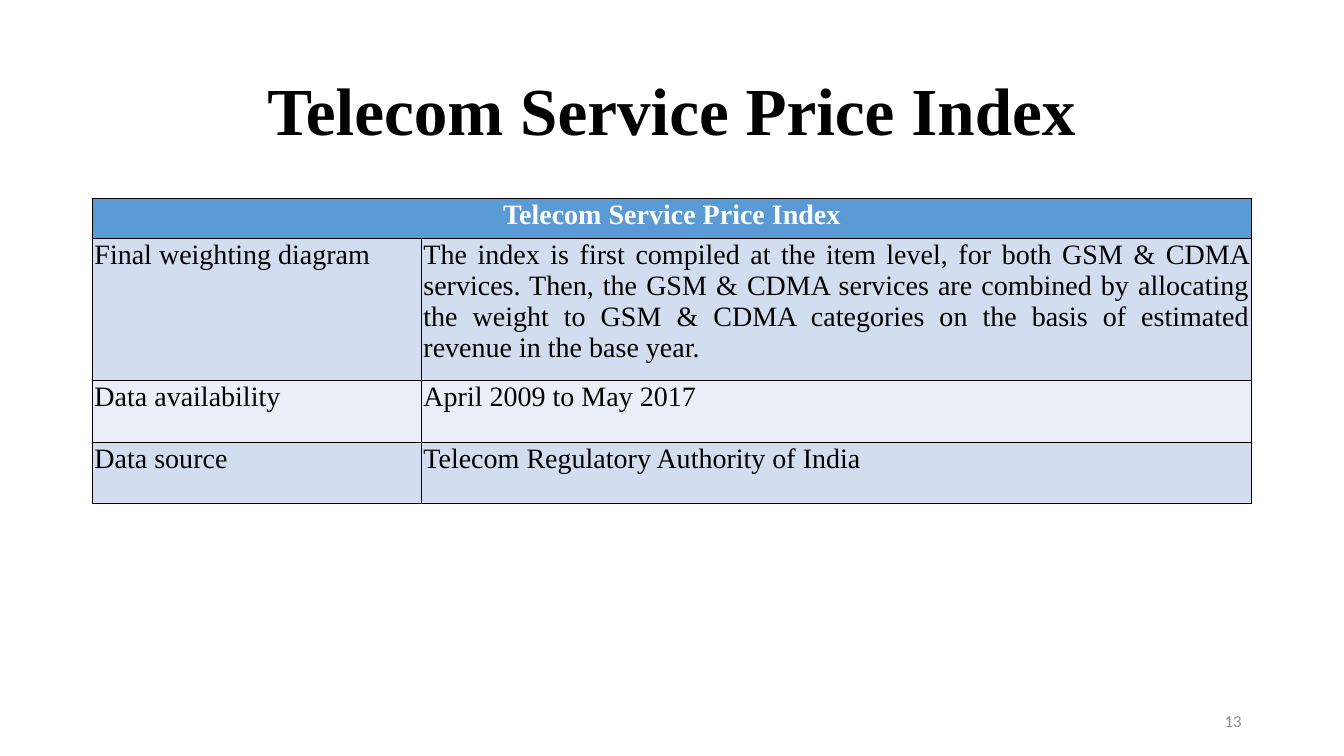
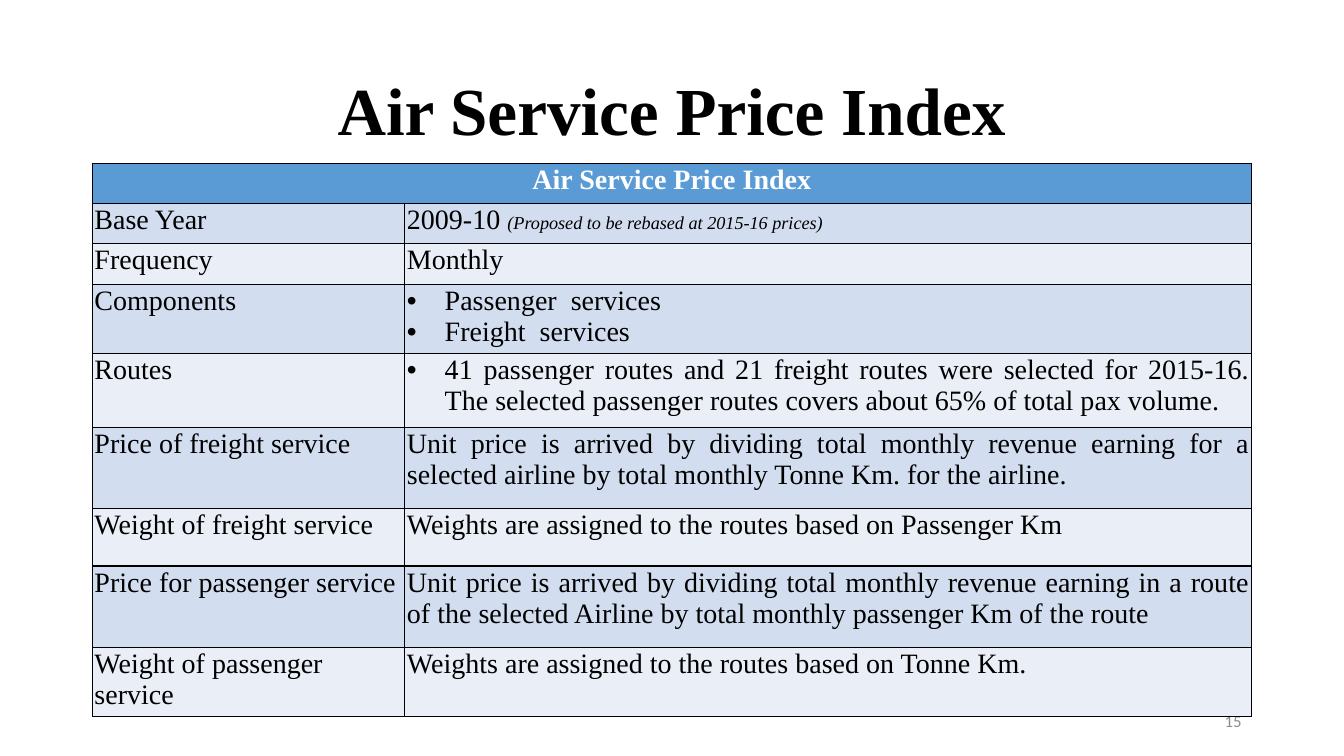
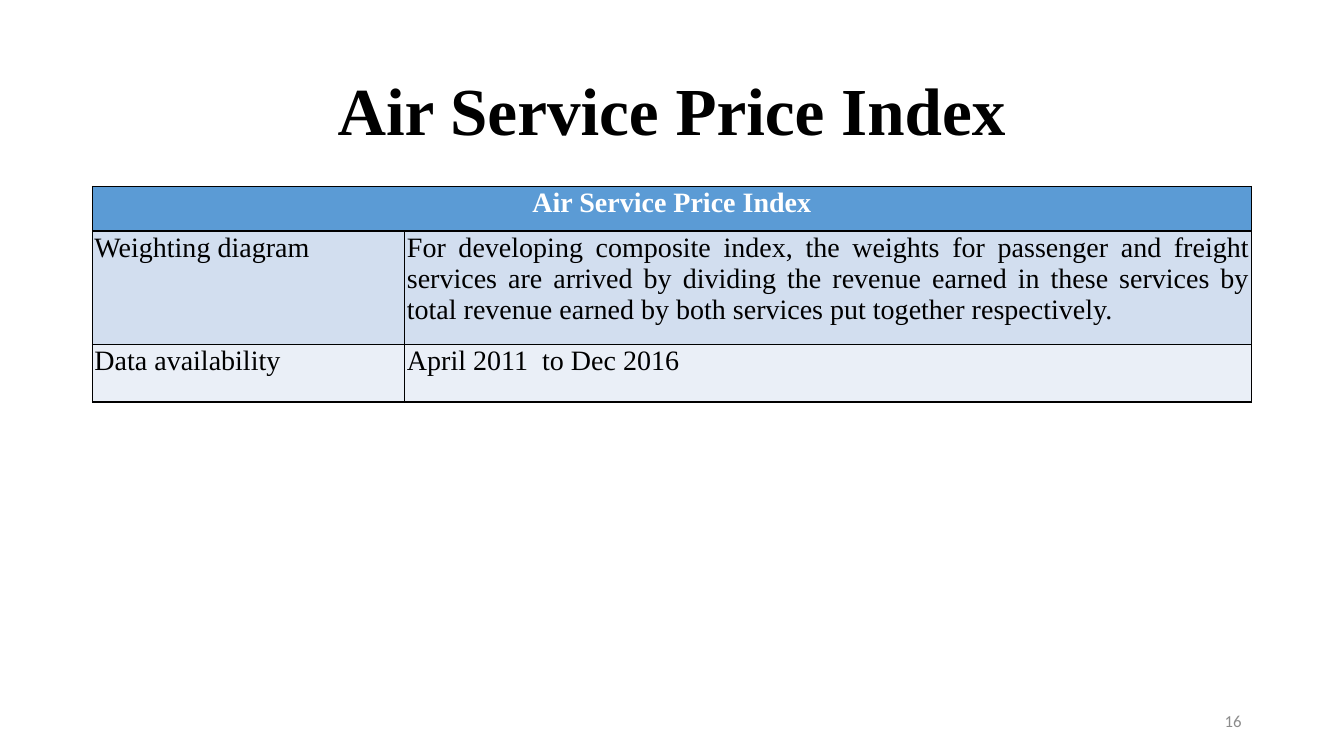
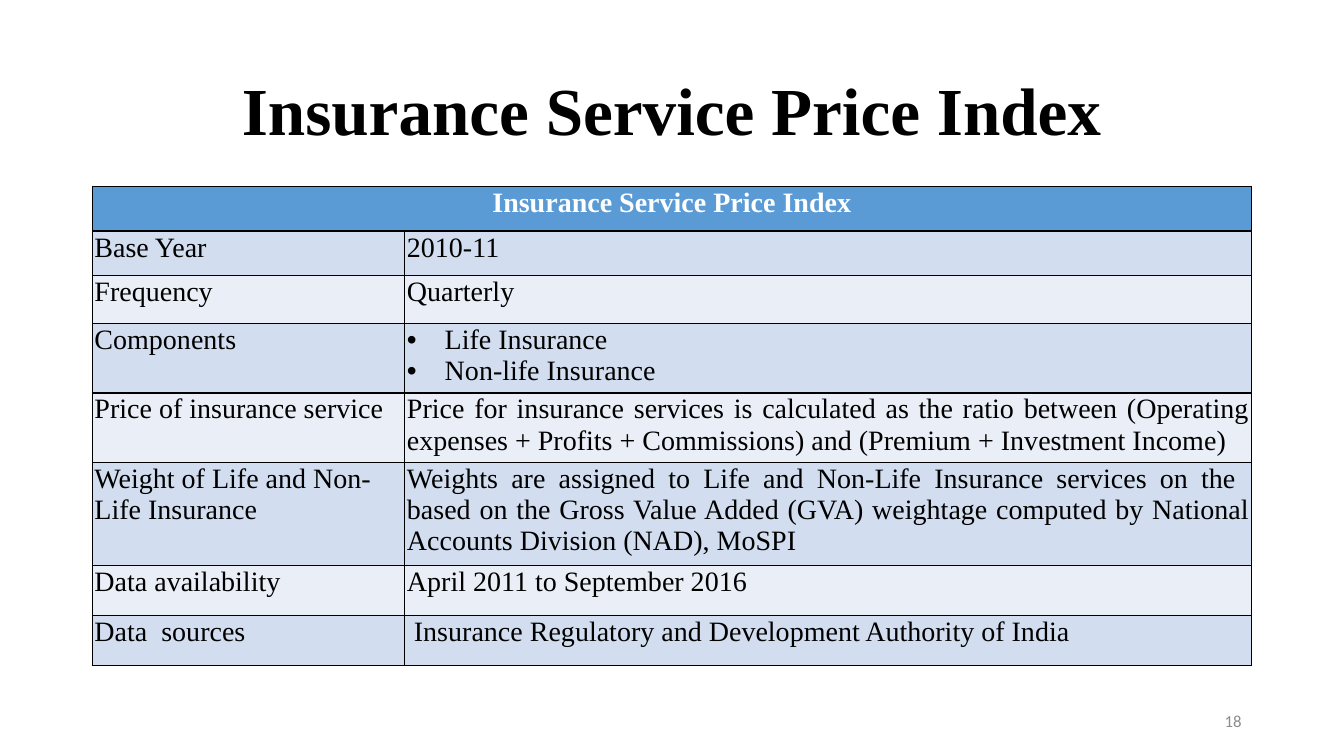
from lxml import etree
from pptx import Presentation
from pptx.dml.color import RGBColor
from pptx.enum.text import MSO_ANCHOR, PP_ALIGN
from pptx.oxml.ns import qn
from pptx.util import Pt

LEFT, CENTER, RIGHT, JUSTIFY = PP_ALIGN.LEFT, PP_ALIGN.CENTER, PP_ALIGN.RIGHT, PP_ALIGN.JUSTIFY
MIDDLE = MSO_ANCHOR.MIDDLE

BLACK = RGBColor(0x00, 0x00, 0x00)
WHITE = RGBColor(0xFF, 0xFF, 0xFF)
GRAY = RGBColor(0x8C, 0x8C, 0x8C)
HEADER_BLUE = RGBColor(0x5B, 0x9B, 0xD5)
BANDS = (RGBColor(0xD2, 0xDE, 0xEF), RGBColor(0xEA, 0xEF, 0xF7))

SERIF, SANS = "Times New Roman", "Calibri"
MARGIN, CONTENT_WIDTH = 66, 828
BULLET_INDENT = 27


def add_run(paragraph, text, font=SERIF, size=20, color=BLACK, bold=False, italic=False):
    run = paragraph.add_run()
    run.text = text
    run.font.name = font
    run.font.size = Pt(size)
    run.font.color.rgb = color
    run.font.bold = bold
    run.font.italic = italic


def write(frame, text, align=LEFT, spacing=None, bullet=False, note=None, **font):
    lines = [text] if isinstance(text, str) else text
    for index, line in enumerate(lines):
        paragraph = frame.add_paragraph() if index else frame.paragraphs[0]
        paragraph.alignment = align
        if spacing:
            paragraph.line_spacing = spacing
        if bullet:
            properties = paragraph._p.get_or_add_pPr()
            properties.set("marL", str(Pt(BULLET_INDENT)))
            properties.set("indent", str(-Pt(BULLET_INDENT)))
            etree.SubElement(properties, qn("a:buFont"), typeface="Arial")
            etree.SubElement(properties, qn("a:buChar"), char="•")
        add_run(paragraph, line, **font)
        if note:
            add_run(paragraph, note, size=13, italic=True)


def add_borders(cell):
    properties = cell._tc.get_or_add_tcPr()
    for side in ("a:lnL", "a:lnR", "a:lnT", "a:lnB"):
        border = etree.SubElement(properties, qn(side), w=str(Pt(1)))
        fill = etree.SubElement(border, qn("a:solidFill"))
        etree.SubElement(fill, qn("a:srgbClr"), val=str(BLACK))


class Deck:
    def __init__(self):
        self.presentation = Presentation()
        self.presentation.slide_width = Pt(960)
        self.presentation.slide_height = Pt(540)
        self.slide = None

    def add_slide(self, title, number):
        self.slide = self.presentation.slides.add_slide(self.presentation.slide_layouts[6])
        self.text_box(title, MARGIN, 28.8, CONTENT_WIDTH, 104.4,
                      align=CENTER, spacing=0.9, size=48, bold=True)
        self.text_box(str(number), 678, 500.4, 216, 28.8,
                      align=RIGHT, font=SANS, size=12, color=GRAY)

    def text_box(self, text, left, top, width, height, **style):
        box = self.slide.shapes.add_textbox(Pt(left), Pt(top), Pt(width), Pt(height))
        box.text_frame.word_wrap = True
        box.text_frame.vertical_anchor = MIDDLE
        write(box.text_frame, text, **style)

    def cell(self, cell, fill):
        cell.margin_left = cell.margin_right = Pt(1.5)
        cell.margin_top = cell.margin_bottom = Pt(0.75)
        add_borders(cell)
        cell.fill.solid()
        cell.fill.fore_color.rgb = fill

    def index_table(self, heading, top, header_height, label_width, rows):
        heights = [header_height] + [row[0] for row in rows]
        table = self.slide.shapes.add_table(
            len(heights), 2, Pt(MARGIN), Pt(top), Pt(CONTENT_WIDTH), Pt(sum(heights))).table
        table.columns[0].width = Pt(label_width)
        table.columns[1].width = Pt(CONTENT_WIDTH - label_width)
        for index, height in enumerate(heights):
            table.rows[index].height = Pt(height)
            fill = BANDS[(index - 1) % 2] if index else HEADER_BLUE
            for column in range(2):
                self.cell(table.cell(index, column), fill)
        table.cell(0, 0).merge(table.cell(0, 1))
        write(table.cell(0, 0).text_frame, heading, align=CENTER, color=WHITE, bold=True)
        for index, (_, label, detail, *note) in enumerate(rows, start=1):
            write(table.cell(index, 0).text_frame, label)
            write(table.cell(index, 1).text_frame, detail, align=JUSTIFY,
                  bullet=isinstance(detail, list), note=note[0] if note else None)


TELECOM_ROWS = [
    (101.5, "Final weighting diagram",
     "The index is first compiled at the item level, for both GSM & CDMA services. "
     "Then, the GSM & CDMA services are combined by allocating the weight to GSM & CDMA "
     "categories on the basis of estimated revenue in the base year."),
    (44, "Data availability", "April 2009 to May 2017"),
    (44, "Data source", "Telecom Regulatory Authority of India"),
]

AIR_ROWS = [
    (28.8, "Base Year", "2009-10 ", "(Proposed to be rebased at 2015-16 prices)"),
    (28.8, "Frequency", "Monthly"),
    (46, "Components", ["Passenger  services", "Freight  services"]),
    (52.6, "Routes",
     ["41 passenger routes and 21 freight routes were selected for 2015-16. "
      "The selected passenger routes covers about 65% of total pax volume."]),
    (58, "Price of freight service",
     "Unit price is arrived by dividing total monthly revenue earning for a selected "
     "airline by total monthly Tonne Km. for the airline."),
    (41.2, "Weight of freight service",
     "Weights are assigned to the routes based on Passenger Km"),
    (58, "Price for passenger service",
     "Unit price is arrived by dividing total monthly revenue earning in a route of the "
     "selected Airline by total monthly passenger Km of the route"),
    (46, "Weight of passenger service",
     "Weights are assigned to the routes based on Tonne Km."),
]

AIR_WEIGHTING_ROWS = [
    (81, "Weighting diagram",
     "For developing composite index, the weights for passenger and freight services are "
     "arrived by dividing the revenue earned in these services by total revenue earned by "
     "both services put together respectively."),
    (41.2, "Data availability", "April 2011  to Dec 2016"),
]

INSURANCE_ROWS = [
    (31.8, "Base Year", "2010-11"),
    (34.4, "Frequency", "Quarterly"),
    (46, "Components", ["Life Insurance", "Non-life Insurance"]),
    (46, "Price of insurance service",
     "Price for insurance services is calculated as the ratio between (Operating expenses "
     "+ Profits + Commissions) and (Premium + Investment Income)"),
    (68, "Weight of Life and Non-Life Insurance",
     "Weights are assigned to Life and Non-Life Insurance services on the  based on the "
     "Gross Value Added (GVA) weightage computed by National Accounts Division (NAD), MoSPI"),
    (35.8, "Data availability", "April 2011 to September 2016"),
    (35.8, "Data  sources", " Insurance Regulatory and Development Authority of India"),
]

SLIDES = [
    ("Telecom Service Price Index", 13, 141.6, 28.8, 235, TELECOM_ROWS),
    ("Air Service Price Index", 15, 116.6, 28.8, 223.2, AIR_ROWS),
    ("Air Service Price Index", 16, 133.2, 31.8, 223.2, AIR_WEIGHTING_ROWS),
    ("Insurance Service Price Index", 18, 133.2, 31.8, 223.2, INSURANCE_ROWS),
]


def main():
    deck = Deck()
    for title, number, top, header_height, label_width, rows in SLIDES:
        deck.add_slide(title, number)
        deck.index_table(title, top, header_height, label_width, rows)
    deck.presentation.save("out.pptx")


if __name__ == "__main__":
    main()
